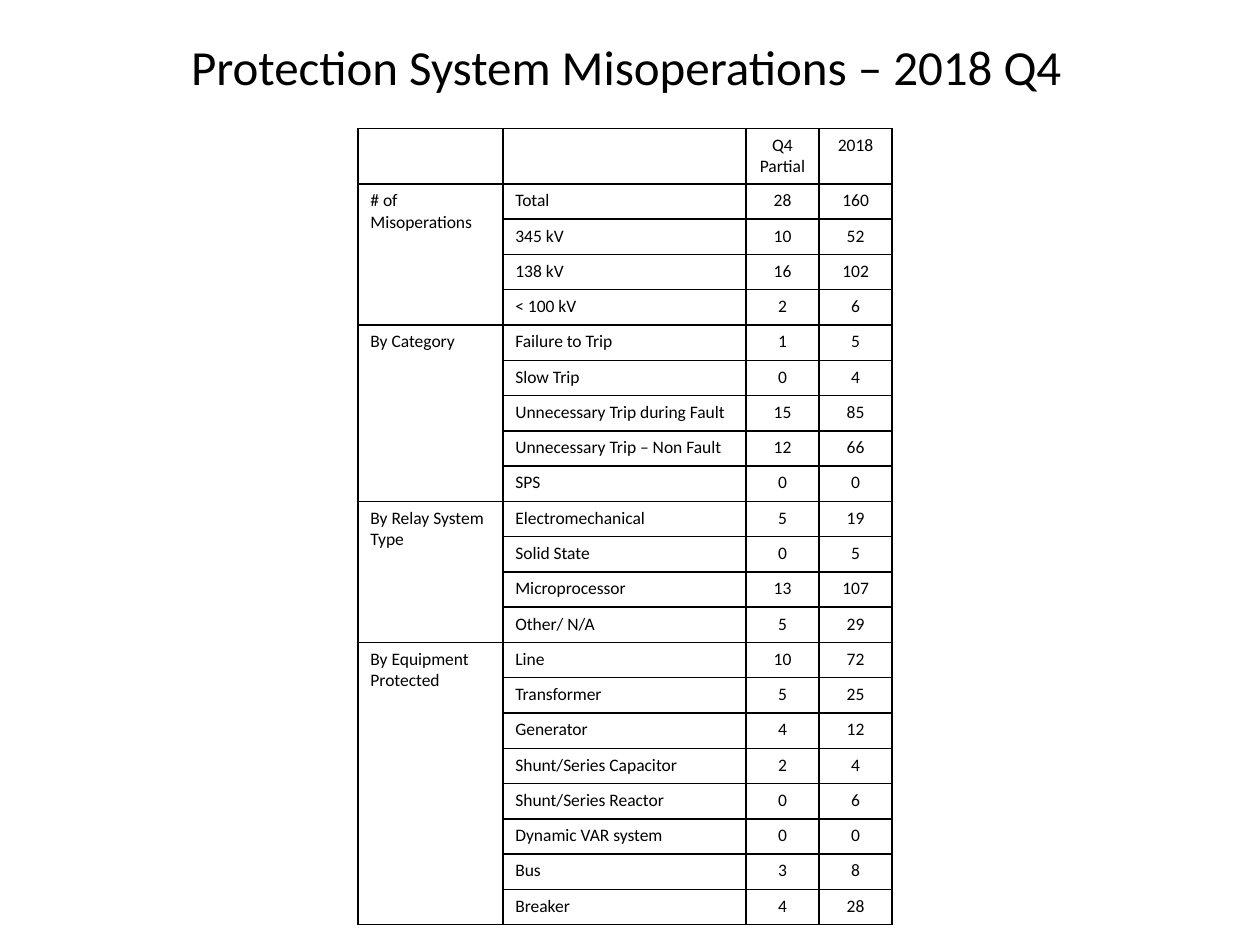
from dataclasses import dataclass

import lxml.etree
import pptx
import pptx.dml.color
import pptx.enum.text
import pptx.oxml
import pptx.oxml.ns
import pptx.table
import pptx.text.text
import pptx.util

Inches = pptx.util.Inches
Align = pptx.enum.text.PP_ALIGN


@dataclass(frozen=True)
class Theme:
    font: str = "Calibri"
    ink: str = "000000"
    title_size: int = 28
    table_size: int = 10
    border_width: int = 1


@dataclass(frozen=True)
class Measure:
    label: str
    quarter: int
    year: int


@dataclass(frozen=True)
class Group:
    heading: str
    measures: tuple[Measure, ...]


THEME = Theme()
COLUMN_WIDTHS = (1.15, 1.93, 0.58, 0.58)
HEADER_HEIGHT = 0.44
ROW_HEIGHT = 0.28

GROUPS = (
    Group("# of Misoperations", (
        Measure("Total", 28, 160),
        Measure("345 kV", 10, 52),
        Measure("138 kV", 16, 102),
        Measure("< 100 kV", 2, 6),
    )),
    Group("By Category", (
        Measure("Failure to Trip", 1, 5),
        Measure("Slow Trip", 0, 4),
        Measure("Unnecessary Trip during Fault", 15, 85),
        Measure("Unnecessary Trip – Non Fault", 12, 66),
        Measure("SPS", 0, 0),
    )),
    Group("By Relay System Type", (
        Measure("Electromechanical", 5, 19),
        Measure("Solid State", 0, 5),
        Measure("Microprocessor", 13, 107),
        Measure("Other/ N/A", 5, 29),
    )),
    Group("By Equipment Protected", (
        Measure("Line", 10, 72),
        Measure("Transformer", 5, 25),
        Measure("Generator", 4, 12),
        Measure("Shunt/Series Capacitor", 2, 4),
        Measure("Shunt/Series Reactor", 0, 6),
        Measure("Dynamic VAR system", 0, 0),
        Measure("Bus", 3, 8),
        Measure("Breaker", 4, 28),
    )),
)


def write(frame: pptx.text.text.TextFrame, lines: tuple[str, ...], size: int,
          align: Align) -> None:
    """Write one paragraph per line."""
    for index, line in enumerate(lines):
        paragraph = frame.add_paragraph() if index else frame.paragraphs[0]
        paragraph.alignment = align
        run = paragraph.add_run()
        run.text = line
        run.font.name = THEME.font
        run.font.size = pptx.util.Pt(size)
        run.font.color.rgb = pptx.dml.color.RGBColor.from_string(THEME.ink)


def write_cell(cell: pptx.table._Cell, *lines: str, align: Align = Align.LEFT) -> None:
    write(cell.text_frame, lines, THEME.table_size, align)


def style_cell(cell: pptx.table._Cell) -> None:
    """Draw all four borders, clear the fill and keep an empty cell small."""
    properties = cell._tc.get_or_add_tcPr()
    width = pptx.util.Pt(THEME.border_width)
    for side in ("lnL", "lnR", "lnT", "lnB"):
        properties.append(pptx.oxml.parse_xml(
            f'<a:{side} {pptx.oxml.ns.nsdecls("a")} w="{width}"><a:solidFill>'
            f'<a:srgbClr val="{THEME.ink}"/></a:solidFill></a:{side}>'))
    cell.fill.background()
    if not cell.text:
        end = lxml.etree.SubElement(cell.text_frame.paragraphs[0]._p,
                                    pptx.oxml.ns.qn("a:endParaRPr"))
        end.set("sz", str(THEME.table_size * 100))


def add_title(slide: pptx.slide.Slide, text: str) -> None:
    title = slide.shapes.add_textbox(Inches(0.42), Inches(0.02), Inches(9.1), Inches(1))
    title.text_frame.word_wrap = True
    title.text_frame.vertical_anchor = pptx.enum.text.MSO_ANCHOR.MIDDLE
    write(title.text_frame, (text,), THEME.title_size, Align.CENTER)


def add_misoperations_table(slide: pptx.slide.Slide) -> None:
    row_count = 1 + sum(len(group.measures) for group in GROUPS)
    height = HEADER_HEIGHT + (row_count - 1) * ROW_HEIGHT
    table = slide.shapes.add_table(
        row_count, len(COLUMN_WIDTHS), Inches(2.84), Inches(1.02),
        Inches(sum(COLUMN_WIDTHS)), Inches(height)).table
    table.first_row = False
    table.horz_banding = False
    for column, width in zip(table.columns, COLUMN_WIDTHS):
        column.width = Inches(width)
    for index, row in enumerate(table.rows):
        row.height = Inches(ROW_HEIGHT if index else HEADER_HEIGHT)

    write_cell(table.cell(0, 2), "Q4", "Partial", align=Align.CENTER)
    write_cell(table.cell(0, 3), "2018", align=Align.CENTER)
    first = 1
    for group in GROUPS:
        last = first + len(group.measures) - 1
        table.cell(first, 0).merge(table.cell(last, 0))
        write_cell(table.cell(first, 0), group.heading)
        for row, measure in enumerate(group.measures, start=first):
            write_cell(table.cell(row, 1), measure.label)
            write_cell(table.cell(row, 2), str(measure.quarter), align=Align.CENTER)
            write_cell(table.cell(row, 3), str(measure.year), align=Align.CENTER)
        first = last + 1
    for cell in table.iter_cells():
        style_cell(cell)


def main() -> None:
    presentation = pptx.Presentation()
    presentation.slide_width = Inches(10)
    presentation.slide_height = Inches(7.5)
    slide = presentation.slides.add_slide(presentation.slide_layouts[6])
    add_misoperations_table(slide)
    add_title(slide, "Protection System Misoperations – 2018 Q4")
    presentation.save("out.pptx")


if __name__ == "__main__":
    main()
